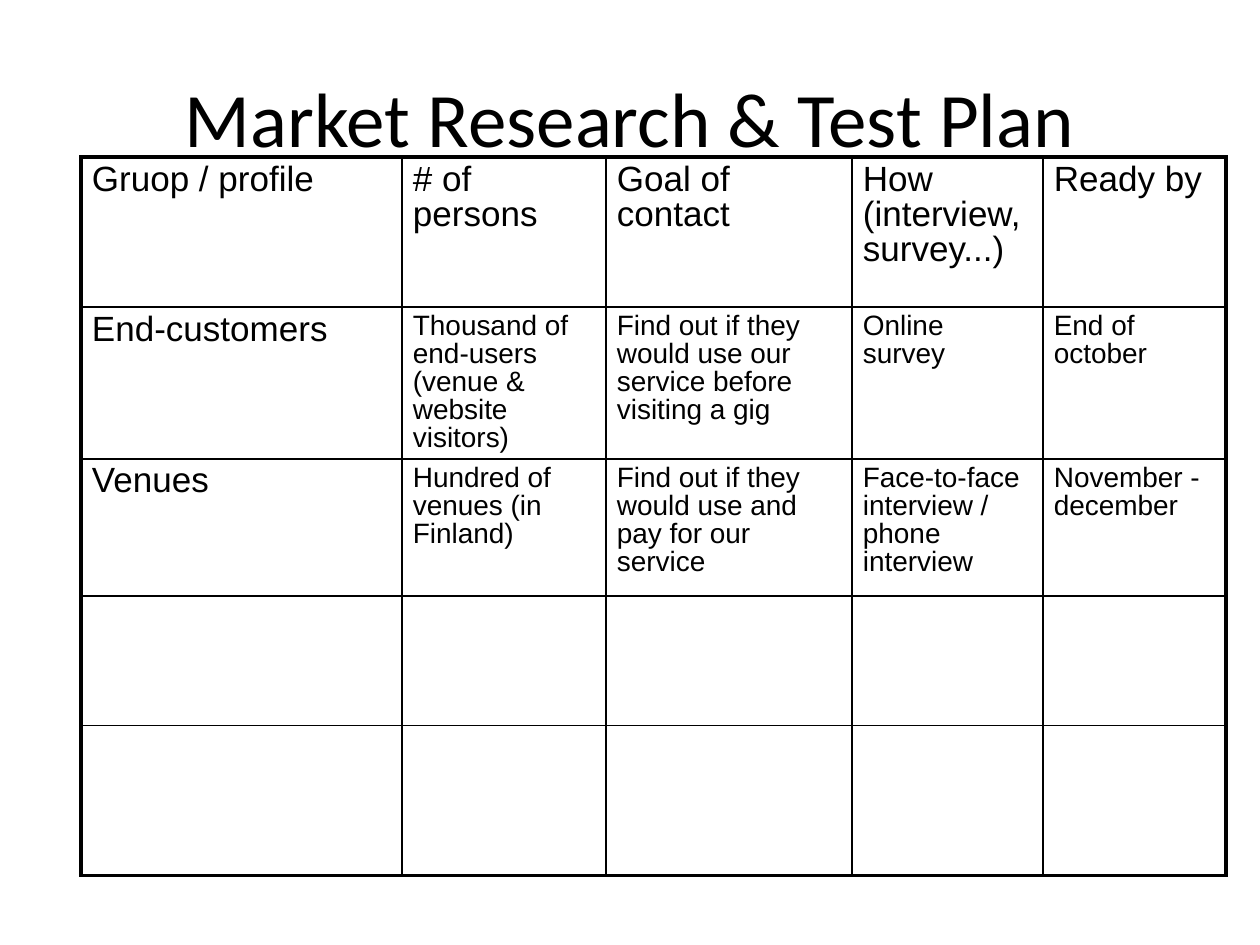
import pptx
import pptx.util
import pptx.dml.color
import pptx.enum.text
from lxml import etree
from pptx.oxml.ns import qn

# Content
TITLE = "Market Research & Test Plan"
PLAN = [
    ["Gruop / profile", "# of persons", "Goal of contact",
     "How (interview, survey...)", "Ready by"],
    ["End-customers", "Thousand of end-users (venue & website visitors)",
     "Find out if they would use our service before visiting a gig",
     "Online survey", "End of october"],
    ["Venues", "Hundred of venues (in Finland)",
     "Find out if they would use and pay for our service",
     "Face-to-face interview / phone interview", "November - december"],
    [""] * 5,
    [""] * 5,
]

# Layout in px
SLIDE = (1260, 945)
TITLE_BOX = (63, 38, 1134, 158)
PLAN_BOX = (81, 157, 1145, 730)
COLUMNS = [321, 204, 246, 191, 183]
ROWS = [150, 126, 137, 130, 150]
CELL_SIDE, CELL_TOP = 11, 6

# Style
COLORS = {"text": "000000", "border": "000000"}
OUTER, INNER = 2.25, 1
HEADING_SIZE, DETAIL_SIZE = 20, 16


def px(length):
    return round(length * 914400 / 126)


def style_font(run, name, size):
    run.font.name = name
    run.font.size = pptx.util.Pt(size)
    run.font.color.rgb = pptx.dml.color.RGBColor.from_string(COLORS["text"])


def add_border(cell, side, width):
    line = etree.SubElement(cell._tc.get_or_add_tcPr(), qn(f"a:ln{side}"),
                            w=str(pptx.util.Pt(width)))
    fill = etree.SubElement(line, qn("a:solidFill"))
    etree.SubElement(fill, qn("a:srgbClr"), val=COLORS["border"])


def fill_cell(cell, text, size):
    cell.margin_left = cell.margin_right = px(CELL_SIDE)
    cell.margin_top = cell.margin_bottom = px(CELL_TOP)
    if not text:
        return
    cell.text_frame.text = text
    paragraph = cell.text_frame.paragraphs[0]
    paragraph.line_spacing = 0.9
    before = etree.SubElement(paragraph._p.get_or_add_pPr(), qn("a:spcBef"))
    etree.SubElement(before, qn("a:spcPct"), val="40000")
    style_font(paragraph.runs[0], "Arial", size)


def main():
    deck = pptx.Presentation()
    deck.slide_width, deck.slide_height = map(px, SLIDE)
    slide = deck.slides.add_slide(deck.slide_layouts[5])

    # Title
    title = slide.shapes.title
    title.left, title.top, title.width, title.height = map(px, TITLE_BOX)
    title.text_frame.text = TITLE
    title.text_frame.vertical_anchor = pptx.enum.text.MSO_ANCHOR.MIDDLE
    heading = title.text_frame.paragraphs[0]
    heading.alignment = pptx.enum.text.PP_ALIGN.CENTER
    style_font(heading.runs[0], "Calibri", 44)

    # Plan grid
    frame = slide.shapes.add_table(len(ROWS), len(COLUMNS), *map(px, PLAN_BOX))
    plan = frame.table
    plan.first_row = plan.horz_banding = False
    for column, width in zip(plan.columns, COLUMNS):
        column.width = px(width)
    for row, height in zip(plan.rows, ROWS):
        row.height = px(height)
    frame.height = px(PLAN_BOX[3])

    # Cells: heavy lines around the grid, thin ones inside
    last_row, last_column = len(ROWS) - 1, len(COLUMNS) - 1
    for r, entries in enumerate(PLAN):
        for c, text in enumerate(entries):
            cell = plan.cell(r, c)
            is_heading = r == 0 or c == 0
            fill_cell(cell, text, HEADING_SIZE if is_heading else DETAIL_SIZE)
            on_edge = {"L": c == 0, "R": c == last_column,
                       "T": r == 0, "B": r == last_row}
            for side, outer in on_edge.items():
                add_border(cell, side, OUTER if outer else INNER)
            cell.fill.background()

    deck.save("out.pptx")


if __name__ == "__main__":
    main()
